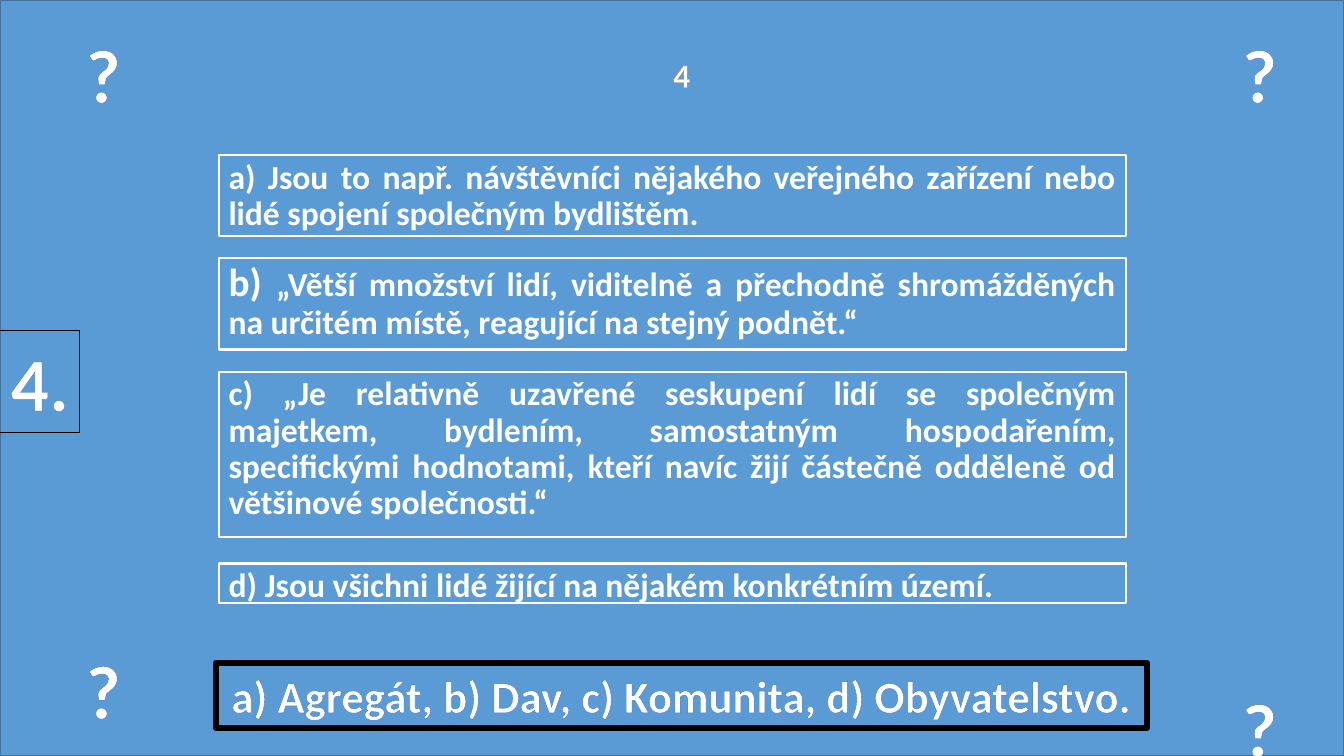
import pptx
import pptx.dml.color
import pptx.enum.shapes
import pptx.enum.text
import pptx.util
import lxml.etree

Cm = pptx.util.Cm
Pt = pptx.util.Pt
RGBColor = pptx.dml.color.RGBColor
PP_ALIGN = pptx.enum.text.PP_ALIGN
MSO_AUTO_SIZE = pptx.enum.text.MSO_AUTO_SIZE
RECTANGLE = pptx.enum.shapes.MSO_SHAPE.RECTANGLE

BLUE = RGBColor(0x5B, 0x9B, 0xD5)
DARK_BLUE = RGBColor(0x43, 0x73, 0x9E)
OUTLINE_BLUE = RGBColor(0x44, 0x72, 0xC4)
ORANGE = RGBColor(0xED, 0x7D, 0x31)
WHITE = RGBColor(0xFF, 0xFF, 0xFF)
BLACK = RGBColor(0x00, 0x00, 0x00)
A = "{http://schemas.openxmlformats.org/drawingml/2006/main}"


def add_run(p, text, size):
    r = p.add_run()
    r.text = text
    r.font.name = "Calibri"
    r.font.size = Pt(size)
    r.font.bold = True
    r.font.color.rgb = WHITE
    return r


def add_label(shapes, text, box, size, outline=OUTLINE_BLUE, outline_width=0.8):
    sp = shapes.add_textbox(*map(Cm, box))
    tf = sp.text_frame
    tf.word_wrap = False
    tf.auto_size = MSO_AUTO_SIZE.SHAPE_TO_FIT_TEXT
    p = tf.paragraphs[0]
    p.alignment = PP_ALIGN.CENTER
    r = add_run(p, text, size)
    ln = lxml.etree.Element(A + "ln", w=str(int(Pt(outline_width))))
    fill = lxml.etree.SubElement(ln, A + "solidFill")
    lxml.etree.SubElement(fill, A + "srgbClr", val=str(outline))
    r.font._element.insert(0, ln)
    return sp


prs = pptx.Presentation()
prs.slide_width = Cm(33.87)
prs.slide_height = Cm(19.05)
s = prs.slides.add_slide(prs.slide_layouts[6])

backdrop = s.shapes.add_group_shape()
sp = backdrop.shapes.add_shape(RECTANGLE, 0, 0, prs.slide_width, prs.slide_height)
sp.shadow.inherit = False
sp.fill.solid()
sp.fill.fore_color.rgb = BLUE
sp.line.color.rgb = DARK_BLUE
sp.line.width = Pt(1)
for left, top in [(1.9, 0.56), (31.04, 0.56), (1.9, 16.08), (31.04, 17.04)]:
    add_label(backdrop.shapes, "?", (left, top, 1.4, 2.57), 54)

framed_labels = [
    ("4.", (0, 8.33, 2.01, 2.57), 54, 0.75),
    ("a) Agregát, b) Dav, c) Komunita, d) Obyvatelstvo.", (5.44, 16.71, 23.47, 1.63), 32, 4.5),
]
for text, box, size, border in framed_labels:
    sp = add_label(s.shapes, text, box, size)
    sp.line.color.rgb = BLACK
    sp.line.width = Pt(border)

add_label(s.shapes, "4", (16.71, 1.24, 0.94, 1.27), 24, ORANGE, 0.52)

definitions = [
    (3.91, 2.03, [("a) Jsou to např. návštěvníci nějakého veřejného zařízení nebo "
                   "lidé spojení společným bydlištěm. ", 24)]),
    (6.5, 2.31, [("b) ", 28),
                 ("„Větší množství lidí, viditelně a přechodně shromážděných "
                  "na určitém místě, reagující na stejný podnět.“", 24)]),
    (9.37, 4.17, [("c) „Je relativně uzavřené seskupení lidí se společným majetkem, "
                   "bydlením, samostatným hospodařením, specifickými hodnotami, kteří "
                   "navíc žijí částečně odděleně od většinové společnosti.“ ", 24)]),
    (14.2, 0.99, [("d) Jsou všichni lidé žijící na nějakém konkrétním území. ", 24)]),
]
for top, height, runs in definitions:
    sp = s.shapes.add_shape(RECTANGLE, Cm(5.51), Cm(top), Cm(22.86), Cm(height))
    sp.shadow.inherit = False
    sp.fill.solid()
    sp.fill.fore_color.rgb = BLUE
    sp.line.color.rgb = WHITE
    sp.line.width = Pt(1.5)
    tf = sp.text_frame
    tf.word_wrap = True
    tf.vertical_anchor = pptx.enum.text.MSO_ANCHOR.TOP
    p = tf.paragraphs[0]
    p.alignment = PP_ALIGN.JUSTIFY
    p.line_spacing = 0.9
    p.space_before = Pt(10)
    for text, size in runs:
        add_run(p, text, size)

prs.save("out.pptx")
